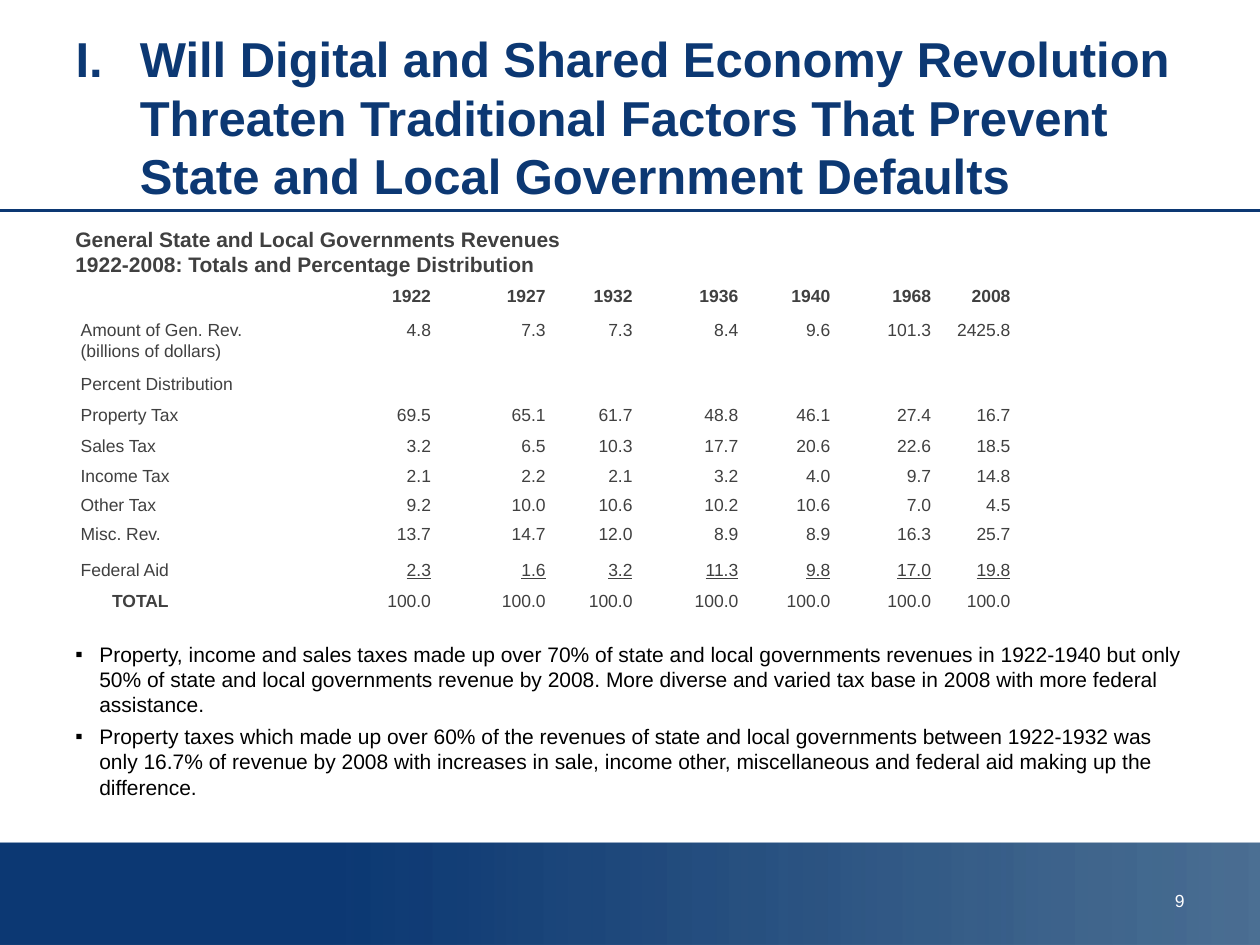
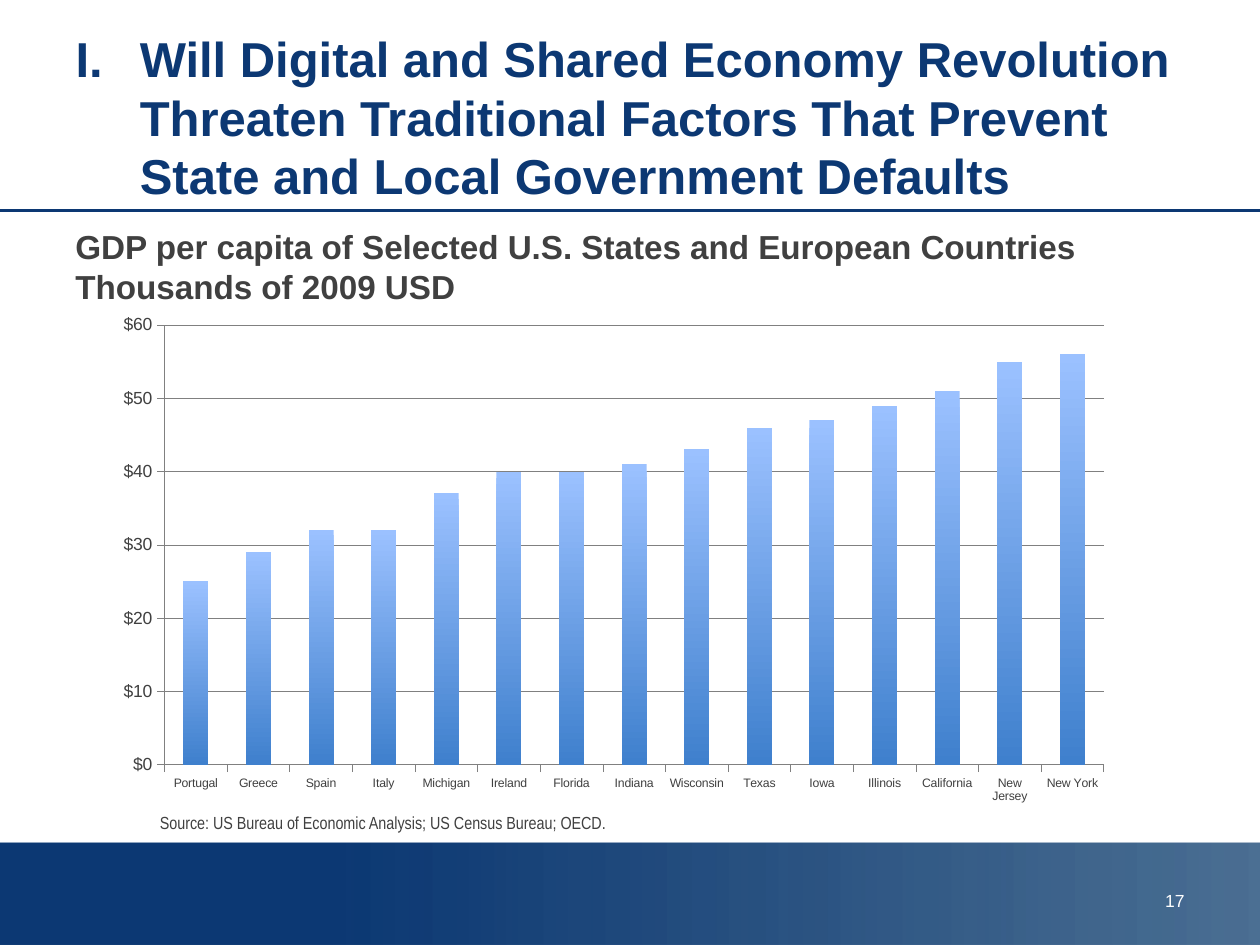
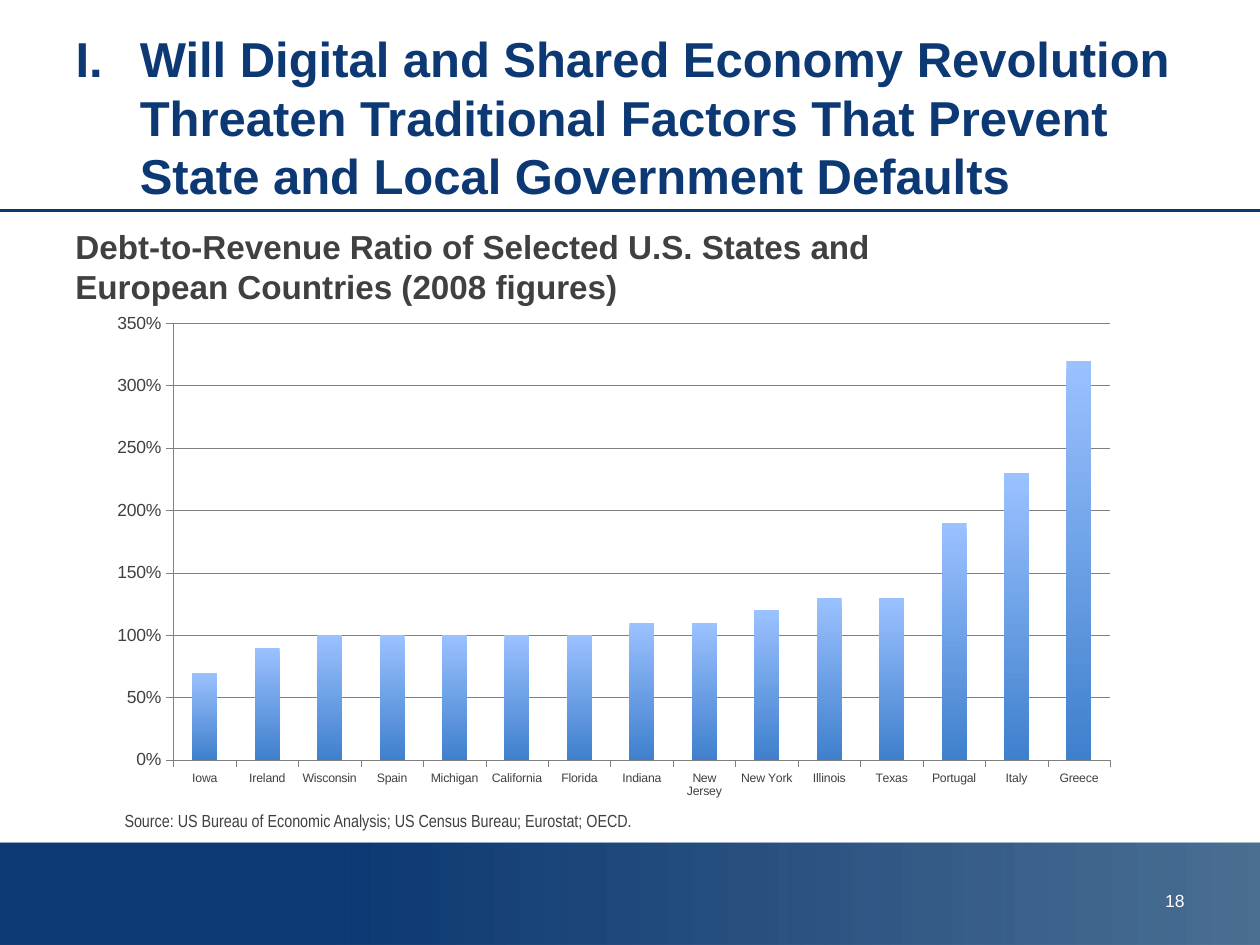
from copy import deepcopy

from lxml import etree
from pptx import Presentation
from pptx import util as u
from pptx.chart.data import CategoryChartData
from pptx.dml.color import RGBColor
from pptx.enum import chart as charts, shapes, text
from pptx.oxml.ns import qn

WIDTH, HEIGHT = u.Inches(10), u.Inches(7.5)
COL, ROW = WIDTH / 100, HEIGHT / 75  # fine grid shared by all slides

NAVY, DEEP_BLUE, DARK_GREY, AXIS_GREY = "0C3873", "003366", "404040", "808080"
BAR_TOP, BAR_BOTTOM, WHITE, BLACK = "9BC1FF", "3F80CD", "FFFFFF", "000000"

HEADLINE = ("I.\tWill Digital and Shared Economy Revolution Threaten Traditional "
            "Factors That Prevent State and Local Government Defaults")

YEARS = ["", "1922", "1927", "1932", "1936", "1940", "1968", "2008"]
REVENUES = [
    YEARS,
    ["Amount of Gen. Rev.\n(billions of dollars)",
     "4.8", "7.3", "7.3", "8.4", "9.6", "101.3", "2425.8"],
    ["Percent Distribution"] + [""] * 7,
    ["Property Tax", "69.5", "65.1", "61.7", "48.8", "46.1", "27.4", "16.7"],
    ["Sales Tax", "3.2", "6.5", "10.3", "17.7", "20.6", "22.6", "18.5"],
    ["Income Tax", "2.1", "2.2", "2.1", "3.2", "4.0", "9.7", "14.8"],
    ["Other Tax", "9.2", "10.0", "10.6", "10.2", "10.6", "7.0", "4.5"],
    ["Misc. Rev.", "13.7", "14.7", "12.0", "8.9", "8.9", "16.3", "25.7"],
    ["Federal Aid", "2.3", "1.6", "3.2", "11.3", "9.8", "17.0", "19.8"],
    ["TOTAL"] + ["100.0"] * 7,
]
YEAR_COLS = [23.1, 6.7, 9.1, 6.9, 8.4, 7.3, 8, 6.3]
REVENUE_ROWS = [2.3, 4.1, 2.4, 2.4, 2.5, 2.4, 2.3, 2.3, 2.8, 2.5]
AMOUNT_ROW, AID_ROW, TOTAL_ROW = 1, 8, 9

FINDINGS = [
    "Property, income and sales taxes made up over 70% of state and local governments "
    "revenues in 1922-1940 but only 50% of state and local governments revenue by 2008. "
    "More diverse and varied tax base in 2008 with more federal assistance.",
    "Property taxes which made up over 60% of the revenues of state and local governments "
    "between 1922-1932 was only 16.7% of revenue by 2008 with increases in sale, income "
    "other, miscellaneous and federal aid making up the difference.",
]

GDP = {"Portugal": 25, "Greece": 29, "Spain": 32, "Italy": 32, "Michigan": 37,
       "Ireland": 40, "Florida": 40, "Indiana": 41, "Wisconsin": 43, "Texas": 46,
       "Iowa": 47, "Illinois": 49, "California": 51, "New Jersey": 55, "New York": 56}
DEBT_RATIO = {"Iowa": 0.7, "Ireland": 0.9, "Wisconsin": 1, "Spain": 1, "Michigan": 1,
              "California": 1, "Florida": 1, "Indiana": 1.1, "New Jersey": 1.1,
              "New York": 1.2, "Illinois": 1.3, "Texas": 1.3, "Portugal": 1.9,
              "Italy": 2.3, "Greece": 3.2}


def color(hex_value):
    return RGBColor.from_string(hex_value)


def grid(left, top, width, height):
    """Turn grid columns and rows into slide lengths."""
    return [int(n) for n in (left * COL, top * ROW, width * COL, height * ROW)]


def write(frame, content, size=10, ink=DARK_GREY, font="Arial", bold=False,
          underline=False, align="LEFT", anchor="TOP", spacing=None, before=0,
          hang=0.0, indent=0.0, bullet=None):
    """Fill a text frame; a list gives one paragraph per entry."""
    frame.word_wrap = True
    frame.vertical_anchor = getattr(text.MSO_ANCHOR, anchor)
    for i, line in enumerate([content] if isinstance(content, str) else content):
        para = frame.add_paragraph() if i else frame.paragraphs[0]
        para.text = line
        para.alignment = getattr(text.PP_ALIGN, align)
        para.line_spacing = spacing
        para.space_before = u.Pt(before if i else 0)
        props = para._p.get_or_add_pPr()
        props.set("marL", str(u.Inches(hang + indent)))
        props.set("indent", str(-u.Inches(hang)))
        if bullet:
            etree.SubElement(props, qn("a:buFont"), typeface=font)
            etree.SubElement(props, qn("a:buChar"), char=bullet)
        for styled in [para, *para.runs]:
            styled.font.size = u.Pt(size)
            styled.font.name = font
            styled.font.bold = bold
            styled.font.underline = underline
            styled.font.color.rgb = color(ink)
        for line_break in para._p.findall(qn("a:br")):
            line_break.append(deepcopy(para.runs[0]._r.rPr))


def add_text(slide, place, content, **style):
    write(slide.shapes.add_textbox(*grid(*place)).text_frame, content, **style)


def fill_gradient(fill, angle, *stops):
    fill.gradient()
    fill.gradient_angle = angle
    for stop, (position, hex_value) in zip(fill.gradient_stops, stops):
        stop.position = position
        stop.color.rgb = color(hex_value)


def decorate_layout(layout, slide):
    """Draw the footer band and title rule, then move them to the layout."""
    band = slide.shapes.add_shape(shapes.MSO_SHAPE.RECTANGLE, *grid(0, 66.9, 100, 8.1))
    band.shadow.inherit = False
    band.line.fill.background()
    fill_gradient(band.fill, 0, (0.25, NAVY), (1, DEEP_BLUE))
    fade = band.element.findall(".//" + qn("a:gs"))[-1][0]
    etree.SubElement(fade, qn("a:alpha"), val="70000")

    rule_y = int(16.7 * ROW)
    rule = slide.shapes.add_connector(shapes.MSO_CONNECTOR.STRAIGHT, 0, rule_y, WIDTH, rule_y)
    rule.line.color.rgb = color(NAVY)
    rule.line.width = u.Pt(2)
    etree.SubElement(rule.element.spPr, qn("a:effectLst"))
    for part in (band, rule):
        layout.shapes.element.append(part.element)


def add_page(deck, number, subtitle, subtitle_size):
    layout = deck.slide_layouts[5]
    slide = deck.slides.add_slide(layout)
    if len(deck.slides) == 1:
        decorate_layout(layout, slide)
    headline = slide.shapes.title
    headline.left, headline.top, headline.width, headline.height = grid(5, 3, 90, 12.5)
    headline.text_frame.auto_size = text.MSO_AUTO_SIZE.NONE
    write(headline.text_frame, HEADLINE, size=28, ink=NAVY, bold=True,
          anchor="MIDDLE", hang=0.51)
    add_text(slide, (5, 17.5, 90, 7.5), subtitle, size=subtitle_size, bold=True)
    add_text(slide, (71.7, 70.15, 23.3, 4), str(number), ink=WHITE, align="RIGHT")
    return slide


def add_revenue_table(slide):
    place = grid(5.4, 22.15, sum(YEAR_COLS), sum(REVENUE_ROWS))
    table = slide.shapes.add_table(len(REVENUES), len(YEARS), *place).table
    table.first_row = table.horz_banding = False
    for column, share in zip(table.columns, YEAR_COLS):
        column.width = int(share * COL)
    for r, (row, share) in enumerate(zip(table.rows, REVENUE_ROWS)):
        row.height = int(share * ROW)
        for c, (cell, value) in enumerate(zip(row.cells, REVENUES[r])):
            cell.fill.background()
            is_amount = r == AMOUNT_ROW
            anchor = "TOP" if is_amount and c else "BOTTOM"
            write(cell.text_frame, value,
                  bold=r == 0 or (r == TOTAL_ROW and c == 0),
                  underline=r == AID_ROW and c > 0,
                  align="RIGHT" if c else "LEFT",
                  indent=0.25 if r == TOTAL_ROW and c == 0 else 0,
                  spacing=u.Pt(12 if is_amount else 4))
            cell.vertical_anchor = getattr(text.MSO_ANCHOR, anchor)


def style_axis(axis, size):
    axis.major_tick_mark = charts.XL_TICK_MARK.OUTSIDE
    axis.minor_tick_mark = charts.XL_TICK_MARK.NONE
    labels = axis.tick_labels.font
    labels.size, labels.name = u.Pt(size), "Arial"
    labels.color.rgb = color(DARK_GREY)
    lines = [axis.format.line]
    if axis.has_major_gridlines:
        lines.append(axis.major_gridlines.format.line)
    for line in lines:
        line.color.rgb = color(AXIS_GREY)
        line.width = u.Pt(0.25)


def set_plot_area(chart, shares):
    """Fix the inner plot area and leave the chart background clear."""
    space = chart.element
    area = space.find(".//" + qn("c:plotArea"))
    for old in area.findall(qn("c:layout")):
        area.remove(old)
    layout = etree.Element(qn("c:layout"))
    manual = etree.SubElement(layout, qn("c:manualLayout"))
    settings = [("layoutTarget", "inner"), ("xMode", "edge"), ("yMode", "edge")]
    for tag, value in settings + list(zip("xywh", shares)):
        etree.SubElement(manual, qn("c:" + tag), val=str(value))
    area.insert(0, layout)
    background = etree.Element(qn("c:spPr"))
    etree.SubElement(background, qn("a:noFill"))
    outline = etree.SubElement(background, qn("a:ln"))
    etree.SubElement(outline, qn("a:noFill"))
    space.find(qn("c:txPr")).addprevious(background)


def add_bars(slide, place, values, plot_shares, top, step, number_format):
    data = CategoryChartData(number_format=number_format)
    data.categories = list(values)
    data.add_series("Series 1", list(values.values()))
    chart = slide.shapes.add_chart(
        charts.XL_CHART_TYPE.COLUMN_CLUSTERED, *grid(*place), data).chart
    chart.has_title = chart.has_legend = False
    chart.font.size, chart.font.name = u.Pt(10), "Calibri"
    chart.font.color.rgb = color(BLACK)

    scale = chart.value_axis
    scale.minimum_scale, scale.maximum_scale, scale.major_unit = 0, top, step
    scale.tick_labels.number_format = number_format
    scale.tick_labels.number_format_is_linked = False
    style_axis(scale, 10)
    style_axis(chart.category_axis, 7)

    bars = chart.plots[0]
    bars.gap_width = 150
    bars.vary_by_categories = False
    fill_gradient(bars.series[0].format.fill, 270, (0, BAR_TOP), (1, BAR_BOTTOM))
    set_plot_area(chart, plot_shares)


def add_source(slide, place, agencies):
    add_text(slide, place, f"Source: {agencies}.", font="Arial Narrow")


def main():
    deck = Presentation()
    deck.slide_width, deck.slide_height = WIDTH, HEIGHT

    # Revenue history
    revenue = add_page(deck, 9, "General State and Local Governments Revenues\n"
                       "1922-2008: Totals and Percentage Distribution", 12)
    add_revenue_table(revenue)
    add_text(revenue, (5, 50.4, 90, 13.7), FINDINGS, size=12, ink=BLACK,
             bullet="▪", hang=0.19, before=4)

    # GDP per capita
    gdp = add_page(deck, 17, "GDP per capita of Selected U.S. States and European "
                   "Countries\nThousands of 2009 USD", 19)
    add_bars(gdp, (5.16, 14.85, 87.7, 52.1), GDP, (0.09, 0.21, 0.85, 0.67),
             top=60, step=10, number_format="\\$#,##0")
    add_source(gdp, (11.7, 63.95, 49.2, 2.7),
               "US Bureau of Economic Analysis; US Census Bureau; OECD")

    # Debt-to-revenue ratio
    debt = add_page(deck, 18, "Debt-to-Revenue Ratio of Selected U.S. States and\n"
                    "European Countries (2008 figures)", 19)
    add_bars(debt, (8.05, 24.8, 81.7, 42.8), DEBT_RATIO, (0.07, 0.02, 0.91, 0.81),
             top=3.5, step=0.5, number_format="0%")
    add_source(debt, (8.9, 63.8, 55.3, 2.7),
               "US Bureau of Economic Analysis; US Census Bureau; Eurostat; OECD")

    deck.save("out.pptx")


if __name__ == "__main__":
    main()
